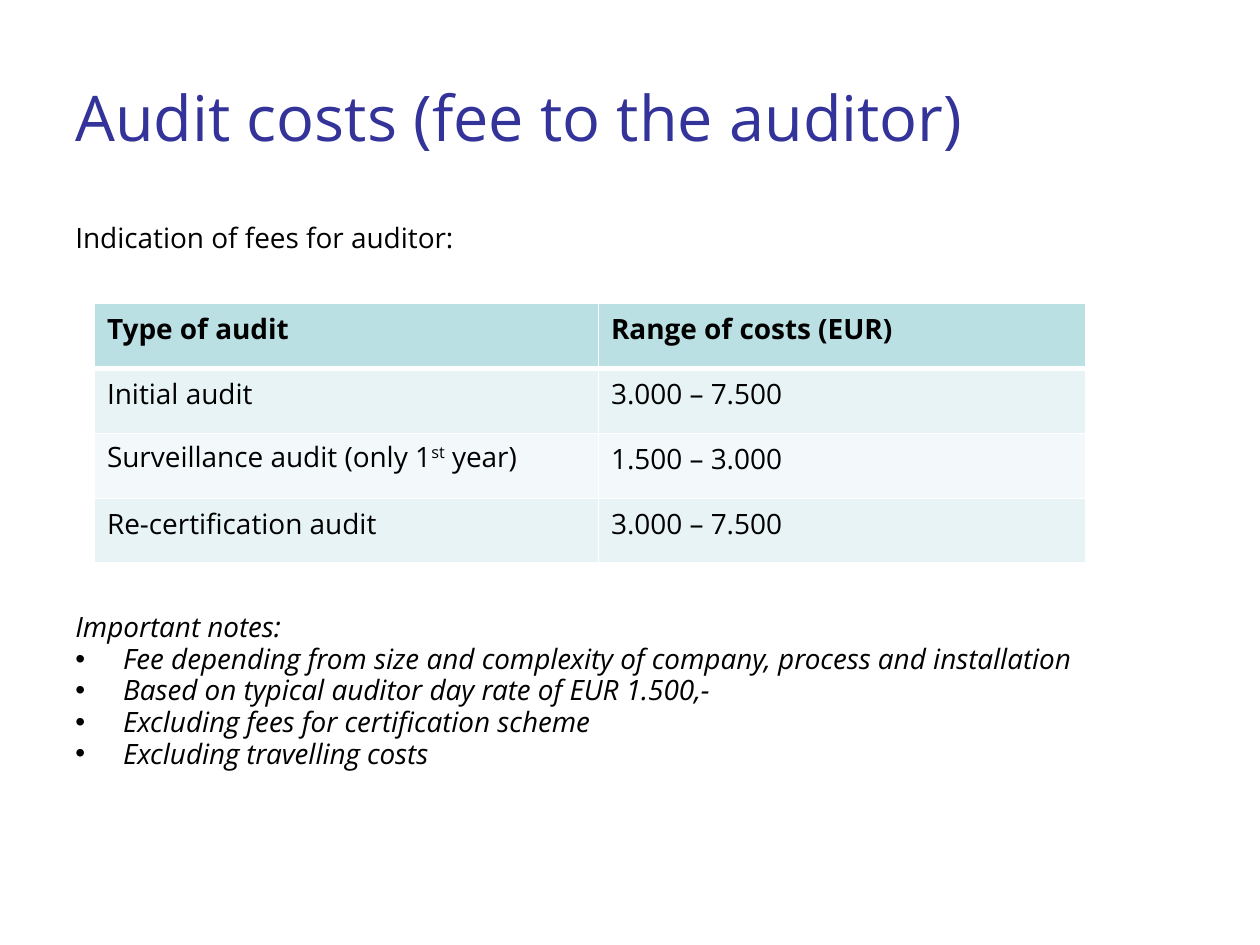
import pptx
import pptx.dml.color
import pptx.enum.text
import pptx.oxml.ns
import pptx.util
from lxml import etree
from pptx.util import Inches

COLORS = {"title": "333399", "text": "000000", "line": "FFFFFF",
          "header": "BBE0E3", "odd": "E7F3F4", "even": "F3F9FA"}
COSTS = [
    ("Type of audit", "Range of costs (EUR)"),
    ("Initial audit", "3.000 – 7.500"),
    ("Surveillance audit (only 1st year)", "1.500 – 3.000"),
    ("Re-certification audit", "3.000 – 7.500"),
]
NOTES = [
    "Fee depending from size and complexity of company, process and installation",
    "Based on typical auditor day rate of EUR 1.500,-",
    "Excluding fees for certification scheme",
    "Excluding travelling costs",
]


def add_element(parent, tag, **attributes):
    return etree.SubElement(parent, pptx.oxml.ns.qn(tag), attributes)


class SlideBuilder:
    font_name = "Open Sans"
    body_size = 16

    def __init__(self, slide):
        self.slide = slide

    def style_runs(self, para, size=body_size, color="text", bold=False, italic=False):
        for run in para.runs:
            font = run.font
            font.name, font.size = self.font_name, pptx.util.Pt(size)
            font.bold, font.italic = bold, italic
            font.color.rgb = pptx.dml.color.RGBColor.from_string(COLORS[color])

    def add_text(self, left, top, width, height, lines, bulleted_from=None,
                 middle=False, line_spacing=0.9, **style):
        """Add one paragraph per line, with bullets from the given line index on."""
        box = self.slide.shapes.add_textbox(
            Inches(left), Inches(top), Inches(width), Inches(height))
        frame = box.text_frame
        frame.word_wrap = True
        if middle:
            frame.vertical_anchor = pptx.enum.text.MSO_ANCHOR.MIDDLE
        frame.text = "\n".join(lines)
        for index, para in enumerate(frame.paragraphs):
            para.line_spacing = line_spacing
            if index:
                para.space_before = pptx.util.Pt(0.8)
            if bulleted_from is not None and index >= bulleted_from:
                properties = para._p.get_or_add_pPr()
                indent = Inches(0.38)
                properties.set("marL", str(indent))
                properties.set("indent", str(-indent))
                add_element(properties, "a:buFont", typeface="Arial")
                add_element(properties, "a:buChar", char="•")
            self.style_runs(para, **style)

    def add_cell_borders(self, cell, bottom_width):
        """Draw white borders, placed before the cell fill as the schema asks."""
        properties = cell._tc.get_or_add_tcPr()
        widths = {"a:lnL": 1, "a:lnR": 1, "a:lnT": 1, "a:lnB": bottom_width}
        for position, (tag, width) in enumerate(widths.items()):
            line = add_element(properties, tag, w=str(pptx.util.Pt(width)))
            fill = add_element(line, "a:solidFill")
            add_element(fill, "a:srgbClr", val=COLORS["line"])
            properties.insert(position, line)

    def add_superscript_text(self, para, text, mark):
        before, after = text.split(mark, 1)
        for part in (before, mark, after):
            span = para.add_run()
            span.text = part
            if part == mark:
                span.font._element.set("baseline", "30000")

    def add_table(self, left, top, column_widths, row_height, rows):
        table = self.slide.shapes.add_table(
            len(rows), len(column_widths), Inches(left), Inches(top),
            Inches(sum(column_widths)), Inches(row_height * len(rows))).table
        for column, width in zip(table.columns, column_widths):
            column.width = Inches(width)
        for row_index, texts in enumerate(rows):
            table.rows[row_index].height = Inches(row_height)
            is_header = row_index == 0
            color = "header" if is_header else ("even", "odd")[row_index % 2]
            for column_index, text in enumerate(texts):
                cell = table.cell(row_index, column_index)
                cell.fill.solid()
                cell.fill.fore_color.rgb = pptx.dml.color.RGBColor.from_string(COLORS[color])
                self.add_cell_borders(cell, bottom_width=3 if is_header else 1)
                para = cell.text_frame.paragraphs[0]
                if "1st" in text:
                    para.line_spacing = 0.9
                    self.add_superscript_text(para, text, "st")
                else:
                    para.text = text
                self.style_runs(para, bold=is_header)


def main():
    deck = pptx.Presentation()
    deck.slide_width, deck.slide_height = Inches(10), Inches(7.5)
    builder = SlideBuilder(deck.slides.add_slide(deck.slide_layouts[6]))
    builder.add_text(0.5, 0.3, 9, 1.25, ["Audit costs (fee to the auditor)"],
                     middle=True, line_spacing=1.0, size=36, color="title")
    builder.add_text(0.5, 1.73, 9, 0.4, ["Indication of fees for auditor:"])
    builder.add_table(0.75, 2.41, [4, 3.87], 0.515, COSTS)
    builder.add_text(0.5, 4.82, 9, 1.6, ["Important notes:", *NOTES],
                     bulleted_from=1, italic=True)
    deck.save("out.pptx")


if __name__ == "__main__":
    main()
